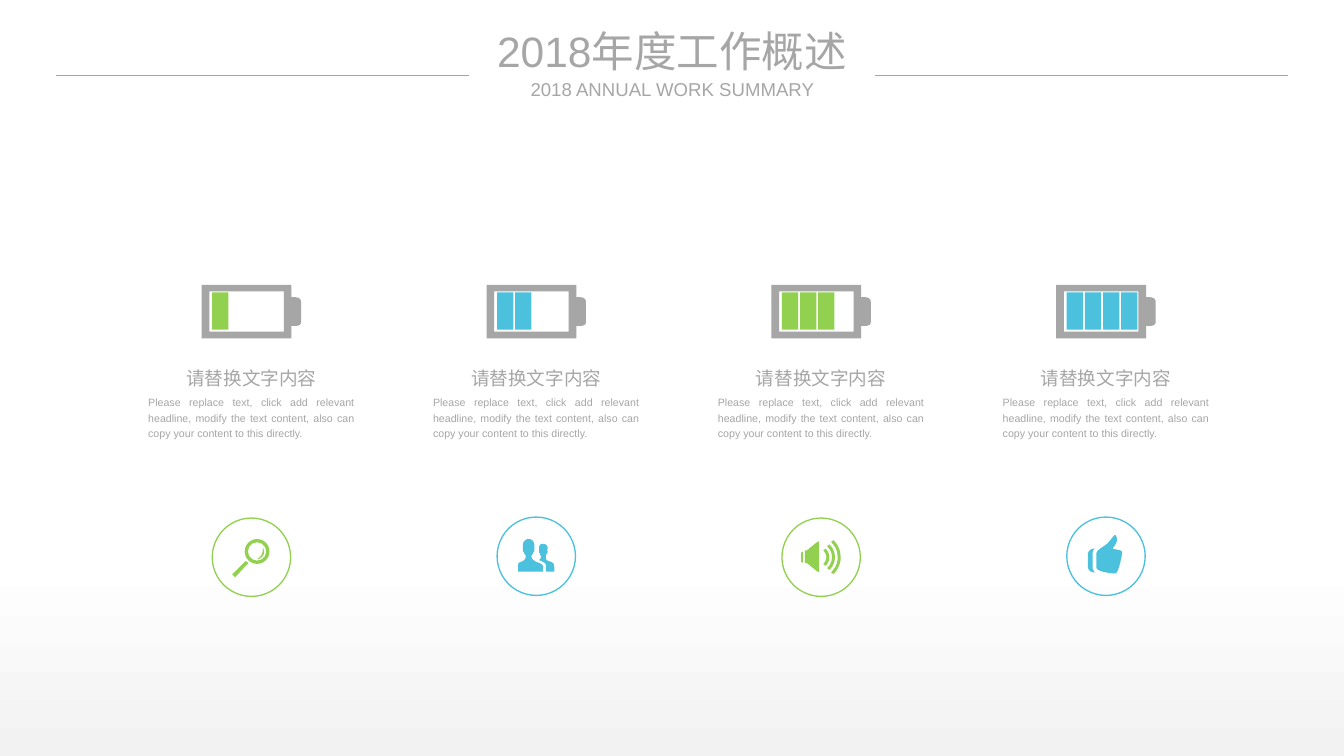
import pptx
import pptx.dml.color
import pptx.enum.shapes
import pptx.enum.text
import pptx.oxml.ns
import pptx.util
from lxml import etree
from pptx.util import Inches

RGB = pptx.dml.color.RGBColor.from_string
SHAPE = pptx.enum.shapes.MSO_SHAPE
ALIGN = pptx.enum.text.PP_ALIGN
ANCHOR = pptx.enum.text.MSO_ANCHOR


class Theme:
    font = "Arial"
    gray = RGB("A6A6A6")
    green = RGB("92D050")
    blue = RGB("4BC1DD")
    floor = RGB("F2F2F2")
    white = RGB("FFFFFF")
    title_size = 32
    heading_size = 14
    body_size = 8
    line_width = pptx.util.Pt(1)
    wave_width = pptx.util.Pt(2.25)


prs = pptx.Presentation()
prs.slide_width = Inches(14.06)
prs.slide_height = Inches(7.91)
slide = prs.slides.add_slide(prs.slide_layouts[6])
shapes = slide.shapes


def add_text(text, left, top, width, height, size=Theme.heading_size, align=ALIGN.CENTER,
             anchor=ANCHOR.TOP, margins=(0, 0), spacing=1.0):
    tf = shapes.add_textbox(Inches(left), Inches(top), Inches(width), Inches(height)).text_frame
    tf.word_wrap = True
    tf.vertical_anchor = anchor
    tf.margin_left = tf.margin_right = Inches(margins[0])
    tf.margin_top = tf.margin_bottom = Inches(margins[1])
    p = tf.paragraphs[0]
    p.alignment = align
    p.line_spacing = spacing
    r = p.add_run()
    r.text = text
    r.font.name = Theme.font
    r.font.size = pptx.util.Pt(size)
    r.font.color.rgb = Theme.gray


def add_outline(contours, left, top, color):
    """Contours hold hundredths of an inch: pairs are corners, sixes are Bézier curves."""
    builder = None
    for contour in contours:
        points = [contour[0]]
        for step in contour[1:]:
            if len(step) == 2:
                points.append(step)
                continue
            x0, y0 = points[-1]
            x1, y1, x2, y2, x3, y3 = step
            for t in (n / 8 for n in range(1, 9)):
                a, b, c, d = (1 - t) ** 3, 3 * t * (1 - t) ** 2, 3 * t * t * (1 - t), t ** 3
                points.append((a * x0 + b * x1 + c * x2 + d * x3,
                               a * y0 + b * y1 + c * y2 + d * y3))
        points = [(Inches(left + x / 100), Inches(top + y / 100)) for x, y in points]
        if builder is None:
            builder = shapes.build_freeform(*points[0])
        else:
            builder.move_to(*points[0])
        builder.add_line_segments(points[1:], close=True)
    sp = builder.convert_to_shape()
    sp.shadow.inherit = False
    sp.fill.solid()
    sp.fill.fore_color.rgb = color
    sp.line.fill.background()


# Icon outlines, measured from the column's left edge and the circle's top
BATTERY = [
    [(94, 13), (94, 0), (0, 0), (0, 56), (94, 56), (94, 43), (97, 43, 104, 44, 104, 39),
     (104, 18), (104, 12, 96, 13, 94, 13)],
    [(86, 49), (8, 49), (8, 7), (86, 7)],
]
MAGNIFIER = [
    [(32, 59), (35, 62), (49, 47), (46, 45)],
    [(64, 31), (65, 40, 58, 43, 58, 43), (60, 43), (69, 38, 64, 31, 64, 31)],
]
PEOPLE = [
    [(71, 57), (71, 57, 71, 49, 70, 49), (70, 48, 68, 47, 65, 46), (62, 45, 62, 44, 62, 41),
     (62, 40, 62, 41, 63, 38), (63, 37, 64, 38, 64, 36), (64, 35, 63, 35, 63, 35),
     (63, 35, 64, 34, 64, 33), (64, 31, 63, 28, 59, 28), (55, 28, 55, 31, 55, 33),
     (55, 34, 55, 35, 55, 36), (55, 38, 55, 37, 56, 38), (56, 41, 57, 40, 57, 41),
     (57, 43, 56, 44, 55, 45), (61, 48, 62, 48, 62, 51), (62, 57)],
    [(52, 47), (49, 45, 47, 44, 47, 41), (47, 39, 48, 40, 49, 37), (49, 36, 50, 37, 50, 34),
     (50, 33, 50, 32, 50, 32), (50, 32, 50, 31, 50, 29), (50, 28, 49, 23, 44, 23),
     (39, 23, 38, 28, 38, 29), (38, 31, 38, 32, 38, 32), (38, 32, 38, 33, 38, 34),
     (38, 37, 39, 36, 39, 37), (40, 40, 41, 39, 41, 41), (41, 44, 40, 45, 36, 47),
     (35, 47, 33, 48, 33, 50), (33, 57), (59, 57), (59, 57, 59, 53, 59, 51),
     (59, 50, 56, 48, 52, 47)],
]
SPEAKER = [
    [(48, 25), (37, 34), (35, 34), (35, 47), (37, 47), (48, 56), (48, 56, 50, 57, 50, 56),
     (50, 25), (50, 24, 48, 25, 48, 25)],
    [(31, 37), (31, 45), (31, 46, 32, 46, 33, 47), (33, 35), (32, 36, 31, 36, 31, 37)],
]
THUMB = [
    [(59, 33), (59, 32, 67, 25, 62, 19), (61, 17, 57, 25, 52, 29), (49, 31, 42, 35, 42, 38),
     (42, 53), (42, 56, 53, 59, 62, 59), (65, 59, 69, 40, 69, 37), (69, 34, 60, 34, 59, 33)],
    [(40, 33), (38, 33, 33, 34, 33, 40), (33, 51), (33, 57, 38, 58, 40, 58),
     (41, 58, 38, 56, 38, 53), (38, 38), (38, 34, 41, 33, 40, 33)],
]

# Background fading to light gray at the bottom
sp = shapes.add_shape(SHAPE.RECTANGLE, 0, 0, prs.slide_width, prs.slide_height)
sp.shadow.inherit = False
sp.line.fill.background()
sp.fill.gradient()
sp.fill.gradient_angle = 90
for stop, color, position in zip(sp.fill.gradient_stops, (Theme.floor, Theme.white), (0, 0.26)):
    stop.color.rgb = color
    stop.position = position

# Title between two rules
add_text("2018年度工作概述", 4.87, 0.26, 4.32, 0.54, size=Theme.title_size, anchor=ANCHOR.MIDDLE)
add_text("2018 ANNUAL WORK SUMMARY", 5.5, 0.81, 3.07, 0.24, anchor=ANCHOR.MIDDLE)
for left in (0.59, 9.15):
    rule = shapes.add_connector(pptx.enum.shapes.MSO_CONNECTOR.STRAIGHT,
                                Inches(left), Inches(0.79), Inches(left + 4.32), Inches(0.79))
    rule.line.color.rgb = Theme.gray
    rule.line.width = Theme.line_width
    etree.SubElement(rule._element.spPr, pptx.oxml.ns.qn("a:effectLst"))

# Four columns: battery, text, circled icon
columns = [(MAGNIFIER, Theme.green, 5.42), (PEOPLE, Theme.blue, 5.41),
           (SPEAKER, Theme.green, 5.42), (THUMB, Theme.blue, 5.41)]
for i, (icon, color, top) in enumerate(columns):
    left = 2.11 + 2.98 * i

    add_outline(BATTERY, left, 2.98, Theme.gray)
    for cell in range(i + 1):
        sp = shapes.add_shape(SHAPE.RECTANGLE, Inches(left + 0.11 + 0.19 * cell), Inches(3.06),
                              Inches(0.17), Inches(0.39))
        sp.shadow.inherit = False
        sp.fill.solid()
        sp.fill.fore_color.rgb = color
        sp.line.fill.background()

    add_text("请替换文字内容", left - 0.67, 3.74, 2.38, 0.39, margins=(0.11, 0.05), spacing=1.2)
    add_text("Please replace text, click add relevant headline, modify the text content, "
             "also can copy your content to this directly.", left - 0.67, 4.07, 2.38, 0.87,
             size=Theme.body_size, align=ALIGN.JUSTIFY, margins=(0.11, 0.05), spacing=1.2)

    sp = shapes.add_shape(SHAPE.OVAL, Inches(left + 0.11), Inches(top), Inches(0.82), Inches(0.82))
    sp.shadow.inherit = False
    sp.fill.background()
    sp.line.color.rgb = color
    sp.line.width = Theme.line_width
    add_outline(icon, left, top, color)

    # Lens ring of the magnifier
    if icon is MAGNIFIER:
        sp = shapes.add_shape(SHAPE.DONUT, Inches(left + 0.45), Inches(top + 0.22),
                              Inches(0.26), Inches(0.26))
        sp.adjustments[0] = 0.13
        sp.shadow.inherit = False
        sp.fill.solid()
        sp.fill.fore_color.rgb = color
        sp.line.fill.background()

    # Sound waves of the speaker, 47 degrees either side of level
    if icon is SPEAKER:
        for radius in (0.11, 0.17, 0.23):
            sp = shapes.add_shape(SHAPE.ARC, Inches(left + 0.48 - radius),
                                  Inches(top + 0.41 - radius),
                                  Inches(2 * radius), Inches(2 * radius))
            sp.adjustments[0] = (360 - 47) * 0.6
            sp.adjustments[1] = 47 * 0.6
            sp.shadow.inherit = False
            sp.fill.background()
            sp.line.color.rgb = color
            sp.line.width = Theme.wave_width

prs.save("out.pptx")
